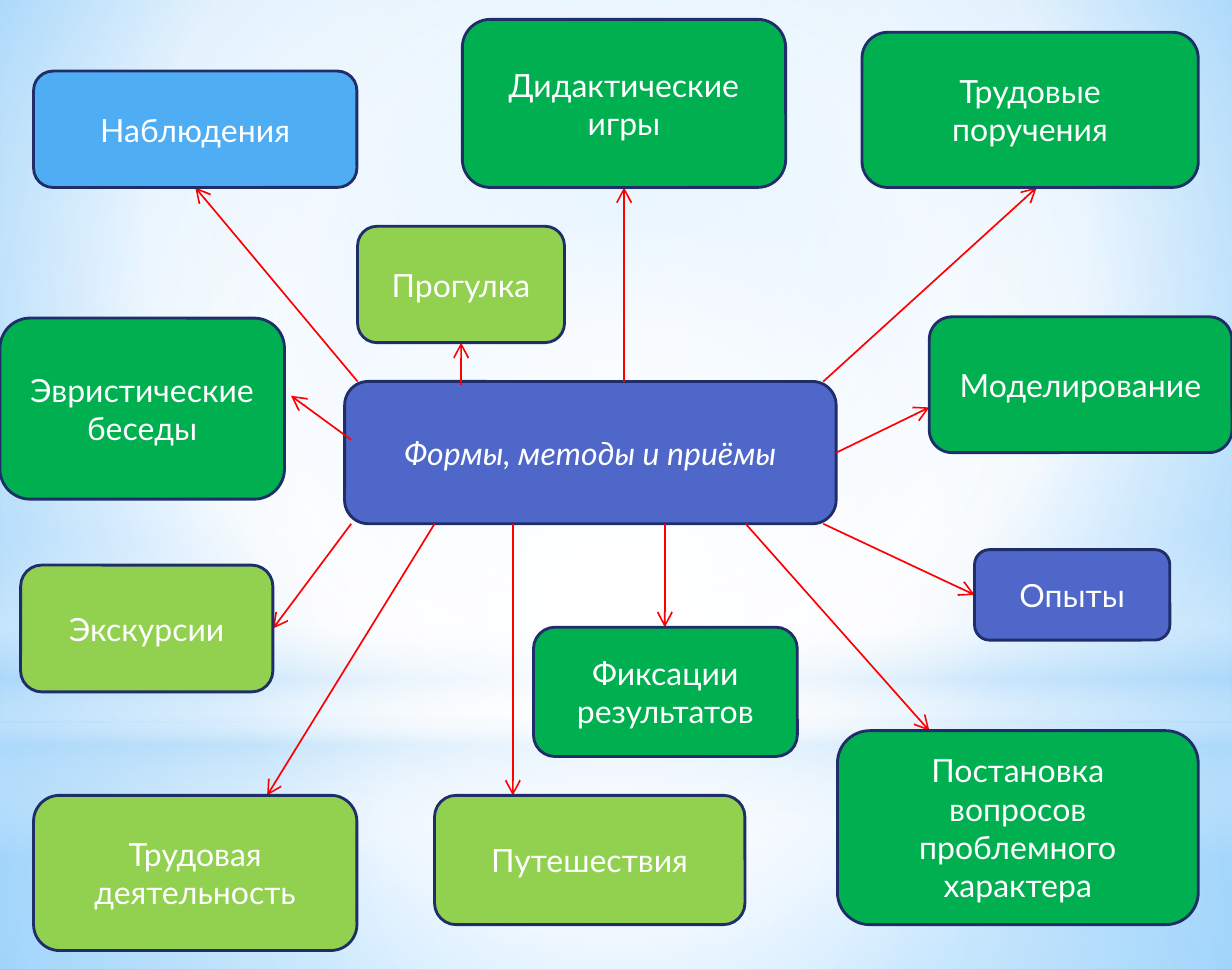
from lxml.etree import SubElement
from pptx import Presentation
from pptx.dml.color import RGBColor
from pptx.enum.shapes import MSO_CONNECTOR, MSO_SHAPE
from pptx.enum.text import MSO_ANCHOR, PP_ALIGN
from pptx.oxml.ns import qn
from pptx.util import Cm, Pt

COLOURS = {
    "indigo": "4E67C8",
    "blue": "4FADF3",
    "green": "00B050",
    "lime": "92D050",
    "outline": "1F2E69",
    "arrow": "FF0000",
    "white": "FFFFFF",
    "haze": "B4DCFA",
    "sky": "9ED5FF",
    "deep_sky": "5BB9FF",
}
WIDTH, HEIGHT = 19.05, 15
HORIZON = 11.18
CENTRE = (50, 50, 50, 50)

# Shape, box in cm, focus (None for a vertical blend), stops (position, colour, opacity)
BACKDROP = [
    (MSO_SHAPE.RECTANGLE, (0, HORIZON, WIDTH, HEIGHT - HORIZON), CENTRE,
     [(0, "white", 91), (37, "white", 76), (100, "haze", 79)]),
    (MSO_SHAPE.RECTANGLE, (0, 0, WIDTH, HORIZON), CENTRE,
     [(0, "white", 89), (48, "white", 62), (100, "haze", 79)]),
    (MSO_SHAPE.RECTANGLE, (0, 8.25, WIDTH, 5), None,
     [(0, "white", 0), (29, "white", 30), (45, "haze", 40),
      (55, "white", 26), (65, "haze", 60), (100, "white", 0)]),
    (MSO_SHAPE.OVAL, (0, 3.5, WIDTH, HORIZON), CENTRE,
     [(0, "white", 100), (56, "white", 0)]),
]

# Text, colour, box, arrow start and arrow end in cm
METHODS = [
    ("Наблюдения", "blue", (0.52, 1.1, 5, 1.8), (5.53, 5.9), (3.02, 2.9)),
    ("Трудовые\nпоручения", "green", (13.33, 0.5, 5.2, 2.4), (12.73, 5.9), (16.03, 2.9)),
    ("Опыты", "indigo", (15.07, 8.5, 3.02, 1.4), (12.73, 8.1), (15.07, 9.2)),
    ("Дидактические\nигры", "green", (7.15, 0.3, 5, 2.6), (9.65, 5.9), (9.65, 2.9)),
    ("Моделирование", "green", (14.37, 4.9, 4.68, 2.1), (12.93, 7), (14.37, 6.3)),
    ("Фиксации\nрезультатов", "green", (8.25, 9.7, 4.08, 2), (10.28, 8.1), (10.28, 9.7)),
    ("Постановка вопросов\nпроблемного\nхарактера", "green", (12.95, 11.3, 5.58, 3),
     (11.53, 8.1), (14.37, 11.3)),
    ("Эвристические\nбеседы", "green", (0, 4.92, 4.4, 2.8), (5.43, 6.8), (4.5, 6.12)),
    ("Прогулка", "lime", (5.53, 3.5, 3.2, 1.8), (7.13, 5.95), (7.13, 5.3)),
    ("Путешествия", "lime", (6.72, 12.3, 4.8, 2), (7.93, 8.1), (7.93, 12.3)),
    ("Трудовая\nдеятельность", "lime", (0.52, 12.3, 5, 2.4), (6.72, 8.1), (4.13, 12.3)),
    ("Экскурсии", "lime", (0.32, 8.74, 3.9, 1.96), (5.43, 8.1), (4.22, 9.72)),
]


def colour(name):
    return RGBColor.from_string(COLOURS[name])


def lengths(values):
    return [Cm(value) for value in values]


def paint_gradient(owner, fill, focus, stops):
    """Fill the owner with a blend, circular around the focus or vertical."""
    fill.gradient()
    gradient = owner.element.find(".//" + qn("a:gradFill"))
    for child in list(gradient):
        gradient.remove(child)
    stop_list = SubElement(gradient, qn("a:gsLst"))
    for position, name, opacity in stops:
        stop = SubElement(stop_list, qn("a:gs"), pos=str(position * 1000))
        tint = SubElement(stop, qn("a:srgbClr"), val=COLOURS[name])
        SubElement(tint, qn("a:alpha"), val=str(opacity * 1000))
    if focus is None:
        SubElement(gradient, qn("a:lin"), ang="5400000", scaled="0")
    else:
        circle = SubElement(gradient, qn("a:path"), path="circle")
        edges = {side: str(share * 1000) for side, share in zip("ltrb", focus)}
        SubElement(circle, qn("a:fillToRect"), **edges)


def add_backdrop(slide):
    paint_gradient(slide, slide.background.fill, (20, 10, 20, 60),
                   [(0, "sky", 100), (60, "white", 100), (100, "deep_sky", 100)])
    for kind, box, focus, stops in BACKDROP:
        shape = slide.shapes.add_shape(kind, *lengths(box))
        shape.shadow.inherit = False
        shape.line.fill.background()
        paint_gradient(shape, shape.fill, focus, stops)


def write_text(shape, text, size=14, font="Lato", name="white", italic=False):
    frame = shape.text_frame
    frame.text = text
    frame.word_wrap = True
    frame.vertical_anchor = MSO_ANCHOR.MIDDLE
    for paragraph in frame.paragraphs:
        paragraph.alignment = PP_ALIGN.CENTER
        for run in paragraph.runs:
            run.font.size = Pt(size)
            run.font.name = font
            run.font.italic = italic
            run.font.color.rgb = colour(name)


def add_card(slide, text, fill, box, **text_format):
    shape = slide.shapes.add_shape(MSO_SHAPE.ROUNDED_RECTANGLE, *lengths(box))
    shape.shadow.inherit = False
    shape.fill.solid()
    shape.fill.fore_color.rgb = colour(fill)
    shape.line.color.rgb = colour("outline")
    shape.line.width = Pt(1.25)
    write_text(shape, text, **text_format)


def add_arrow(slide, start, end):
    arrow = slide.shapes.add_connector(MSO_CONNECTOR.STRAIGHT, *lengths(start + end))
    arrow.line.color.rgb = colour("arrow")
    arrow.line.width = Pt(0.75)
    properties = arrow.element.spPr
    SubElement(properties.find(qn("a:ln")), qn("a:tailEnd"), type="arrow")
    SubElement(properties, qn("a:effectLst"))


def main():
    presentation = Presentation()
    presentation.slide_width = Cm(WIDTH)
    presentation.slide_height = Cm(HEIGHT)
    blank_layout = presentation.slide_layouts[6]
    slide = presentation.slides.add_slide(blank_layout)
    add_backdrop(slide)
    add_card(slide, "Формы, методы и приёмы", "indigo", (5.33, 5.9, 7.6, 2.2), italic=True)
    for text, fill, box, start, end in METHODS:
        add_arrow(slide, start, end)
        add_card(slide, text, fill, box)
    presentation.save("out.pptx")


if __name__ == "__main__":
    main()
